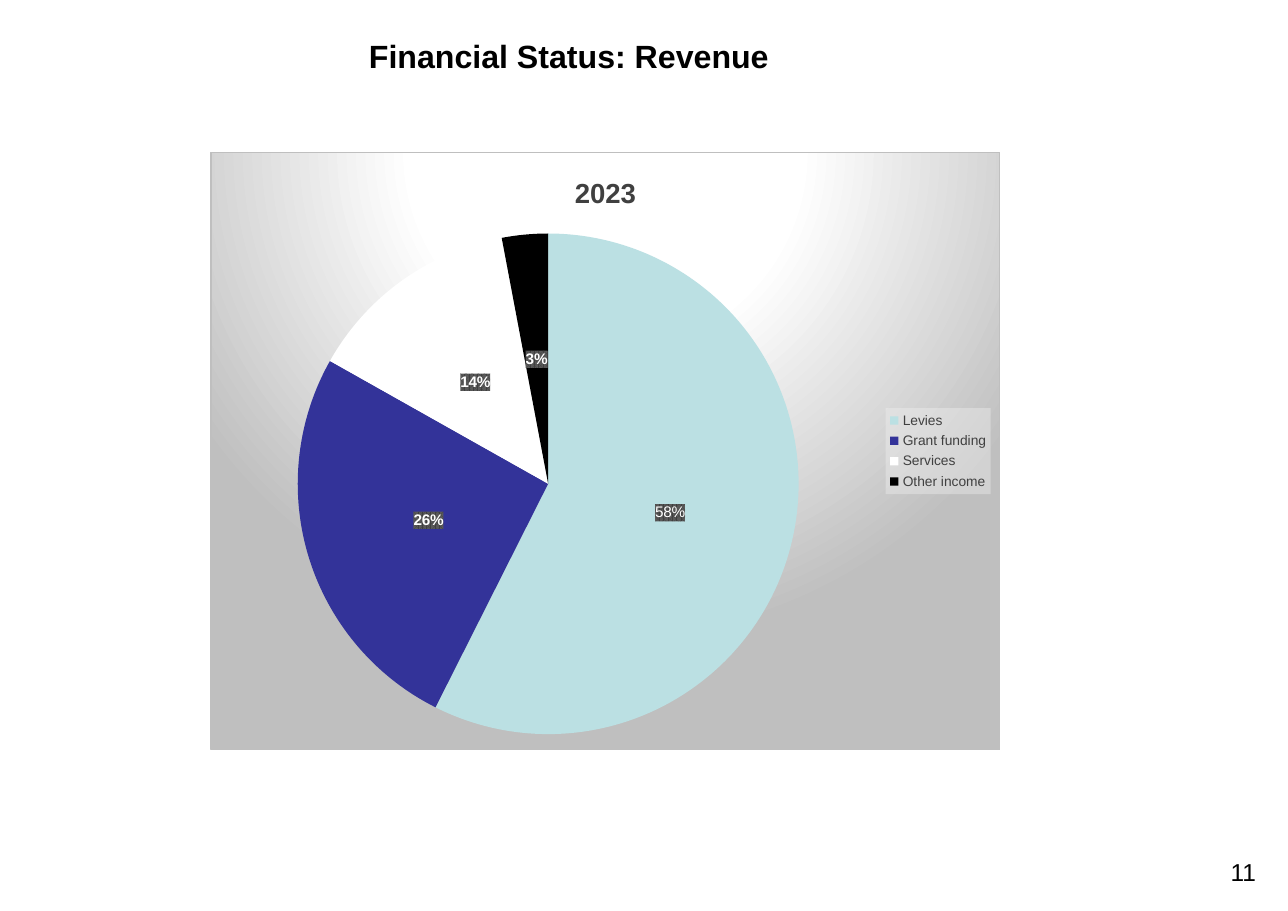
"""Build the revenue slide: a title, a pie chart of 2023 revenue and a slide number."""
from pptx import Presentation
from pptx.chart.data import CategoryChartData
from pptx.dml.color import RGBColor
from pptx.enum.chart import XL_CHART_TYPE, XL_LABEL_POSITION, XL_LEGEND_POSITION
from pptx.enum.text import MSO_AUTO_SIZE, PP_ALIGN
from pptx.oxml import parse_xml
from pptx.oxml.ns import nsdecls
from pptx.util import Pt


def style_font(font, size, color, bold=False):
    """Set the typeface, size, colour and weight of a font."""
    font.name = "Arial"
    font.size = Pt(size)
    font.bold = bold
    font.color.rgb = RGBColor.from_string(color)


def chart_part(tag, content):
    """Return a chart element that holds the given XML."""
    return parse_xml(f'<c:{tag} {nsdecls("c", "a")}>{content}</c:{tag}>')


presentation = Presentation()
presentation.slide_width = Pt(841.68)
presentation.slide_height = Pt(595.44)
slide = presentation.slides.add_slide(presentation.slide_layouts[6])

texts = [
    ("11", (653.76, 555.84, 174.96, 39.6), 16, False, PP_ALIGN.RIGHT, (7.92, 4.32)),
    ("Financial Status: Revenue", (234, 20.16, 397.44, 32.4), 21, True, PP_ALIGN.LEFT, (7.2, 3.6)),
]
for text, place, size, bold, alignment, (side, edge) in texts:
    text_box = slide.shapes.add_textbox(*map(Pt, place))
    frame = text_box.text_frame
    frame.word_wrap = True
    frame.margin_left = frame.margin_right = Pt(side)
    frame.margin_top = frame.margin_bottom = Pt(edge)
    if bold:
        frame.auto_size = MSO_AUTO_SIZE.SHAPE_TO_FIT_TEXT
    paragraph = frame.paragraphs[0]
    paragraph.alignment = alignment
    run = paragraph.add_run()
    run.text = text
    style_font(run.font, size, "000000", bold)

revenue = CategoryChartData(number_format="0")
revenue.categories = ["Levies", "Grant funding", "Services", "Other income"]
revenue.add_series("2023", (58, 26, 14, 3))
chart = slide.shapes.add_chart(
    XL_CHART_TYPE.PIE, Pt(137.52), Pt(99.36), Pt(516.24), Pt(390.96), revenue
).chart
style_font(chart.font, 10, "000000")

chart.has_title = True
chart.chart_title.include_in_layout = False
run = chart.chart_title.text_frame.paragraphs[0].add_run()
run.text = "2023"
style_font(run.font, 18, "404040", True)

chart.has_legend = True
chart.legend.position = XL_LEGEND_POSITION.RIGHT
chart.legend.include_in_layout = False
style_font(chart.legend.font, 9, "404040")

plot = chart.plots[0]
plot.vary_by_categories = True
series = plot.series[0]
for index, color in enumerate(["BBE0E3", "333399", "FFFFFF", "000000"]):
    slice_format = series.points[index].format
    slice_format.fill.solid()
    slice_format.fill.fore_color.rgb = RGBColor.from_string(color)
    slice_format.line.fill.background()

labels = series.data_labels
labels.show_value = False
labels.show_percentage = True
labels.number_format = "0%"
labels.number_format_is_linked = False
labels.position = XL_LABEL_POSITION.CENTER
style_font(labels.font, 10, "FFFFFF", True)

levies_label = series.points[0].data_label
run = levies_label.text_frame.paragraphs[0].add_run()
run.text = "58%"
style_font(run.font, 10, "FFFFFF")
levies_label.position = XL_LABEL_POSITION.CENTER

chart_space = chart.element
label_fill = (
    '<a:pattFill prst="pct75"><a:fgClr><a:srgbClr val="404040"/></a:fgClr>'
    '<a:bgClr><a:srgbClr val="595959"/></a:bgClr></a:pattFill><a:ln><a:noFill/></a:ln>'
)
legend_fill = '<a:solidFill><a:srgbClr val="F2F2F2"><a:alpha val="39000"/></a:srgbClr></a:solidFill>'
chart_space.xpath(".//c:dLbls/c:txPr")[0].addprevious(chart_part("spPr", label_fill))
chart_space.xpath(".//c:dLbl/c:tx")[0].addnext(chart_part("spPr", label_fill))
chart_space.xpath(".//c:legend/c:txPr")[0].addprevious(chart_part("spPr", legend_fill))

stops = "".join(
    f'<a:gs pos="{position}000"><a:srgbClr val="{color}"/></a:gs>'
    for position, color in [(0, "FFFFFF"), (39, "FFFFFF"), (100, "BFBFBF")]
)
background = (
    f'<a:gradFill><a:gsLst>{stops}</a:gsLst><a:path path="circle">'
    '<a:fillToRect l="50000" t="-80000" r="50000" b="180000"/></a:path></a:gradFill>'
    '<a:ln w="9525"><a:solidFill><a:srgbClr val="BFBFBF"/></a:solidFill></a:ln>'
)
chart_space.xpath("c:chart")[0].addnext(chart_part("spPr", background))

plot_area = chart_space.xpath(".//c:plotArea")[0]
for layout in plot_area.xpath("c:layout"):
    plot_area.remove(layout)
pie_place = '<c:layoutTarget val="inner"/><c:xMode val="edge"/><c:yMode val="edge"/>' + "".join(
    f'<c:{key} val="{value}"/>' for key, value in [("x", 0.11), ("y", 0.135), ("w", 0.635), ("h", 0.84)]
)
plot_area.insert(0, chart_part("layout", f"<c:manualLayout>{pie_place}</c:manualLayout>"))

presentation.save("out.pptx")
